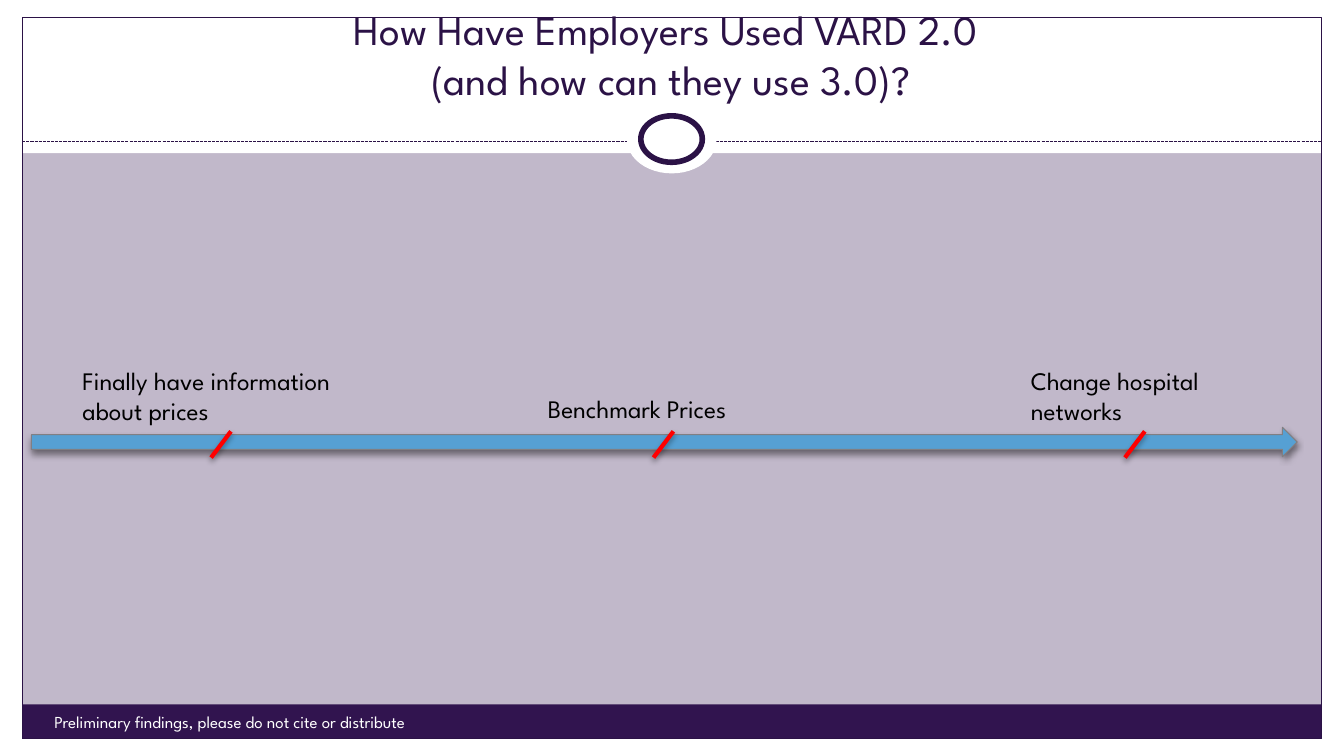
from lxml.etree import SubElement
from pptx import Presentation
from pptx.dml.color import RGBColor
from pptx.enum.dml import MSO_LINE
from pptx.enum.shapes import MSO_CONNECTOR, MSO_SHAPE as SHAPE
from pptx.enum.text import MSO_ANCHOR as ANCHOR, PP_ALIGN as ALIGN
from pptx.oxml.ns import qn
from pptx.util import Cm, Pt

WHITE = RGBColor(0xFF, 0xFF, 0xFF)
BLACK = RGBColor(0, 0, 0)
LILAC = RGBColor(0xC1, 0xB8, 0xCA)
PURPLE = RGBColor(0x31, 0x14, 0x4F)
DARK_PURPLE = RGBColor(0x2B, 0x12, 0x46)
BLUE = RGBColor(0x56, 0xA0, 0xD3)
GREY = RGBColor(0x80, 0x7F, 0x83)
RED = RGBColor(0xFF, 0, 0)

WIDTH, HEIGHT = 33.87, 19.05
MARGIN, EDGE = 0.56, 0.43
INNER = WIDTH - 2 * MARGIN
FOOTER_TOP, FOOTER_HEIGHT = 17.75, 0.87
RULE_Y = 3.56

# label, left, top, width, height, x of the tick's upper end
STEPS = [
    ("Finally have information about prices", 1.83, 9.07, 7.95, 1.8, 5.82),
    ("Benchmark Prices", 13.56, 9.78, 6.71, 1.02, 16.97),
    ("Change hospital networks", 25.73, 9.07, 6.3, 1.8, 28.85),
]
TICK_TOP, TICK_BOTTOM, TICK_SLANT = 10.87, 11.53, 0.5


class SlidePainter:
    font = "League Spartan"

    def __init__(self, slide):
        self.slide = slide

    def background(self, color):
        fill = self.slide.background.fill
        fill.solid()
        fill.fore_color.rgb = color

    def effects(self, element, opacity):
        """Replace theme effects with a soft downward shadow, or none at 0 percent."""
        properties = element._element.spPr
        for old in properties.findall(qn("a:effectLst")):
            properties.remove(old)
        effects = SubElement(properties, qn("a:effectLst"))
        if opacity:
            shadow = SubElement(effects, qn("a:outerShdw"), blurRad=str(Pt(4)),
                                dist=str(Pt(2)), dir="5400000", rotWithShape="0")
            color = SubElement(shadow, qn("a:srgbClr"), val=str(BLACK))
            SubElement(color, qn("a:alpha"), val=str(opacity * 1000))

    def shape(self, kind, left, top, width, height, fill=None, line=None,
              weight=0.75, shadow=0):
        shape = self.slide.shapes.add_shape(
            kind, Cm(left), Cm(top), Cm(width), Cm(height))
        shape.shadow.inherit = False
        if fill is None:
            shape.fill.background()
        else:
            shape.fill.solid()
            shape.fill.fore_color.rgb = fill
        if line is None:
            shape.line.fill.background()
        else:
            shape.line.color.rgb = line
            shape.line.width = Pt(weight)
        self.effects(shape, shadow)

    def line(self, x1, y1, x2, y2, color, weight, dash=None, shadow=0):
        line = self.slide.shapes.add_connector(
            MSO_CONNECTOR.STRAIGHT, Cm(x1), Cm(y1), Cm(x2), Cm(y2))
        line.line.color.rgb = color
        line.line.width = Pt(weight)
        if dash is not None:
            line.line.dash_style = dash
        self.effects(line, shadow)

    def text(self, words, left, top, width, height, size, color,
             align=ALIGN.LEFT, anchor=ANCHOR.TOP):
        frame = self.slide.shapes.add_textbox(
            Cm(left), Cm(top), Cm(width), Cm(height)).text_frame
        frame.word_wrap = True
        frame.vertical_anchor = anchor
        frame.text = words
        for paragraph in frame.paragraphs:
            paragraph.alignment = align
            for run in paragraph.runs:
                run.font.name = self.font
                run.font.size = Pt(size)
                run.font.color.rgb = color


def draw_frame(painter):
    painter.background(LILAC)
    for band in [
        (0, HEIGHT - EDGE, WIDTH, EDGE),
        (0, 0, WIDTH, 3.86),
        (0, 0, MARGIN, HEIGHT),
        (WIDTH - MARGIN, 0, MARGIN, HEIGHT),
    ]:
        painter.shape(SHAPE.RECTANGLE, *band, fill=WHITE)
    painter.shape(SHAPE.RECTANGLE, MARGIN, FOOTER_TOP, INNER, FOOTER_HEIGHT, fill=PURPLE)
    painter.shape(SHAPE.RECTANGLE, MARGIN, EDGE, INNER, HEIGHT - 2 * EDGE, line=DARK_PURPLE)
    painter.line(MARGIN, RULE_Y, WIDTH - MARGIN, RULE_Y, DARK_PURPLE, 0.75,
                 dash=MSO_LINE.SQUARE_DOT)
    painter.shape(SHAPE.OVAL, 15.8, 2.67, 2.26, 1.7, fill=WHITE)
    painter.shape(SHAPE.OVAL, 16.15, 2.92, 1.55, 1.17, fill=WHITE,
                  line=DARK_PURPLE, weight=4)


def draw_timeline(painter):
    painter.shape(SHAPE.RIGHT_ARROW, 0.79, 10.77, 31.9, 0.74, fill=BLUE,
                  line=GREY, shadow=45)
    for label, left, top, width, height, tick_x in STEPS:
        painter.text(label, left, top, width, height, 18, BLACK)
        painter.line(tick_x, TICK_TOP, tick_x - TICK_SLANT, TICK_BOTTOM, RED, 3,
                     shadow=35)


def main():
    deck = Presentation()
    deck.slide_width, deck.slide_height = Cm(WIDTH), Cm(HEIGHT)
    painter = SlidePainter(deck.slides.add_slide(deck.slide_layouts[6]))
    draw_frame(painter)
    painter.text("How Have Employers Used VARD 2.0 \v(and how can they use 3.0)?",
                 1.12, 0.64, 31.6, 2.11, 29.7, DARK_PURPLE, ALIGN.CENTER, ANCHOR.BOTTOM)
    painter.text("Preliminary findings, please do not cite or distribute",
                 1.12, 17.81, 13.26, 1.02, 12, WHITE)
    draw_timeline(painter)
    deck.save("out.pptx")


if __name__ == "__main__":
    main()
